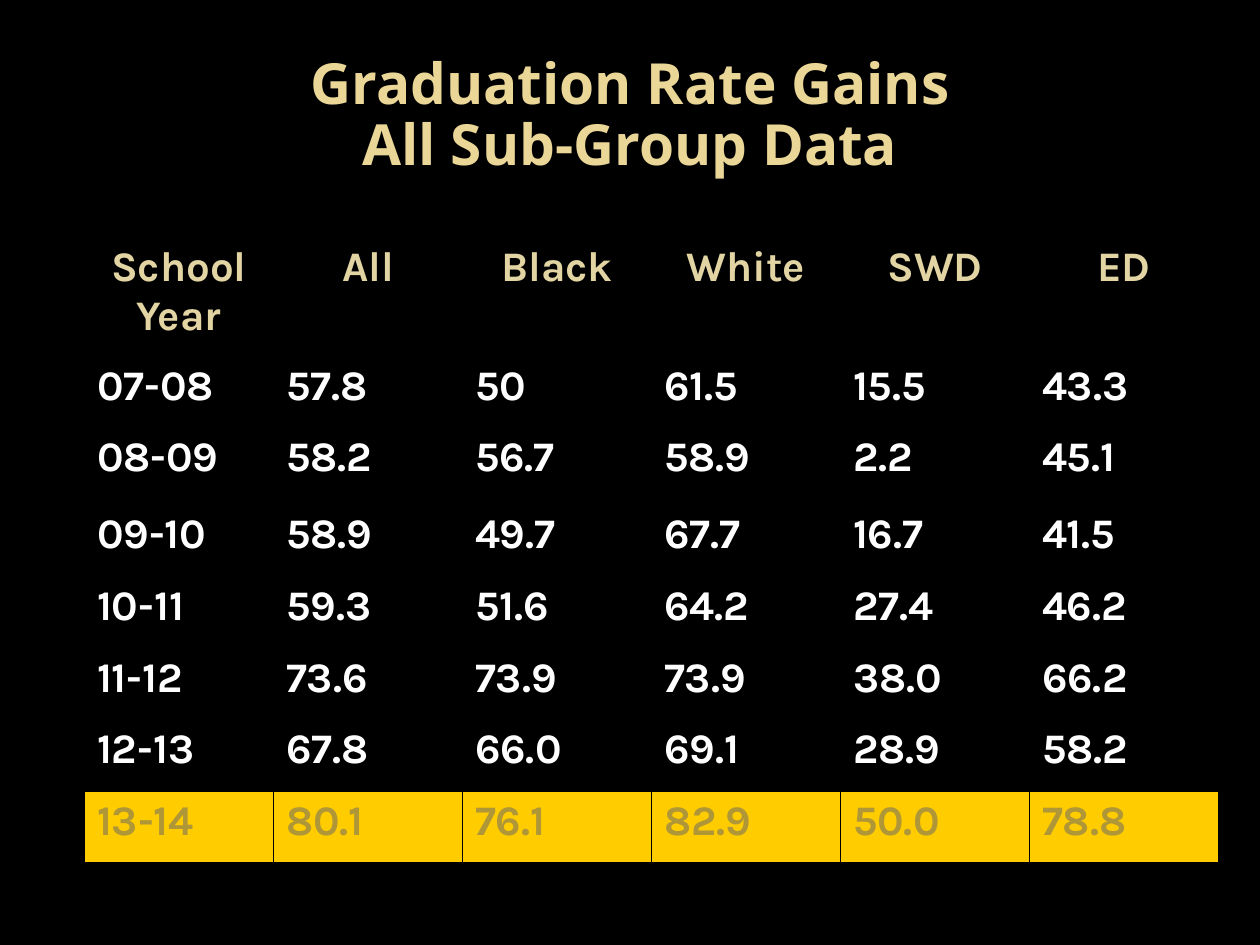
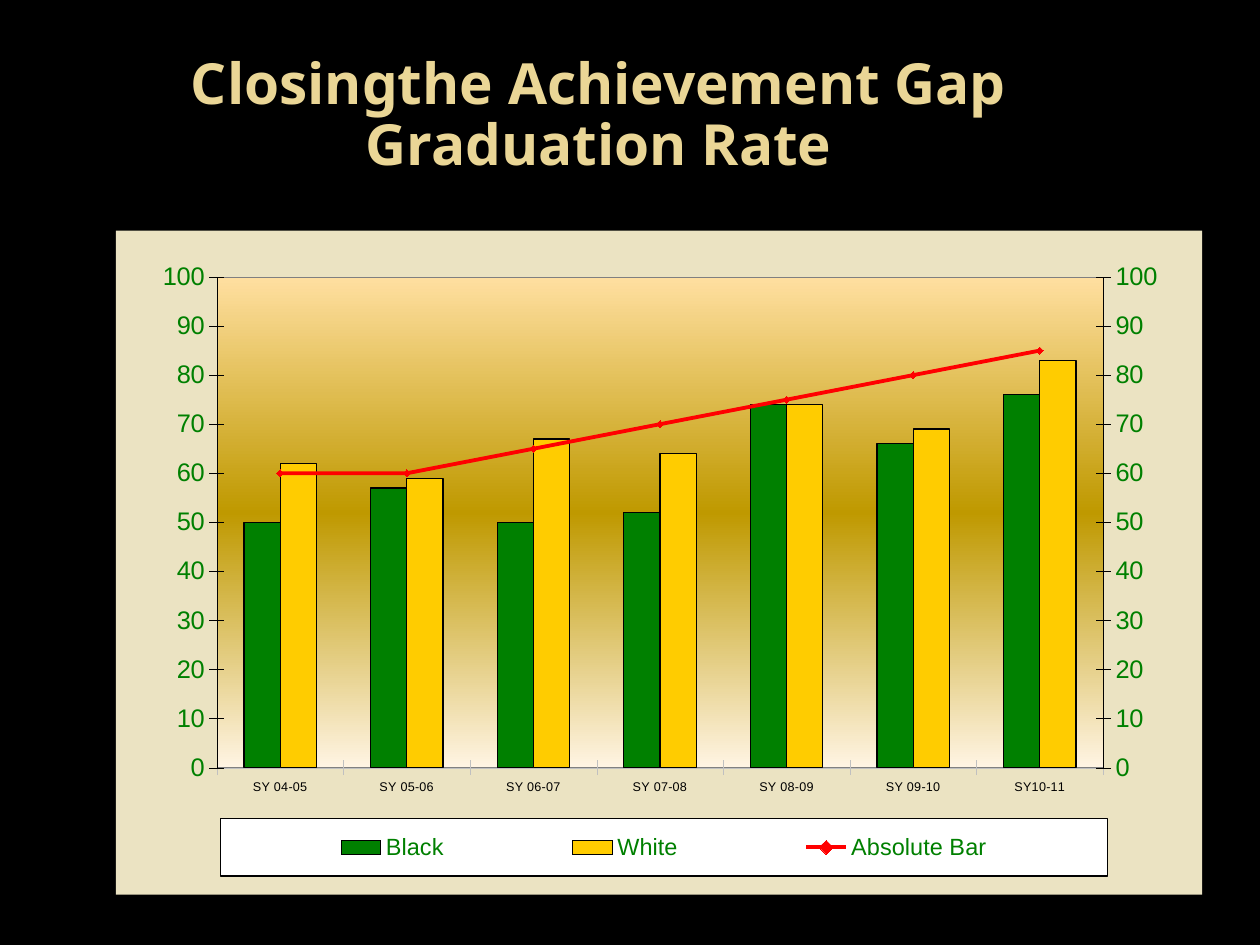
"""Build two slides on graduation rates: a sub-group table and an achievement gap chart."""
import copy
import lxml.etree
import pptx
import pptx.chart.data
import pptx.chart.plot
import pptx.dml.color
import pptx.enum.chart
import pptx.enum.text
import pptx.oxml
import pptx.util

Inches, Pt = pptx.util.Inches, pptx.util.Pt
RGB = pptx.dml.color.RGBColor.from_string
C = {"black": "000000", "white": "FFFFFF", "title": "EAD696", "head": "E2D5A3",
     "gold": "FFCC00", "olive": "AF9738", "green": "008000", "red": "FF0000",
     "cream": "EBE3C2", "grey": "808080", "silver": "C0C0C0",
     "peach": "FFDFA0", "bronze": "BF9900", "ivory": "FFF4E3"}
NS = ('xmlns:c="http://schemas.openxmlformats.org/drawingml/2006/chart" '
      'xmlns:a="http://schemas.openxmlformats.org/drawingml/2006/main"')


def style(font, name, size, color, bold=False):
    font.name, font.size, font.bold = name, Pt(size), bold
    font.color.rgb = RGB(color)


def xml(tag, body):
    return pptx.oxml.parse_xml(f"<{tag} {NS}>{body}</{tag}>")


prs = pptx.Presentation()
prs.slide_width, prs.slide_height = Inches(10), Inches(7.5)
slides = []
for left, title in ((0.5, "Graduation Rate Gains\vAll Sub-Group Data"),
                    (0.25, "Closingthe Achievement Gap\vGraduation Rate")):
    s = prs.slides.add_slide(prs.slide_layouts[6])
    s.background.fill.solid()
    s.background.fill.fore_color.rgb = RGB(C["black"])
    tf = s.shapes.add_textbox(Inches(left), Inches(0.3), Inches(9), Inches(1.25)).text_frame
    tf.word_wrap = True
    tf.vertical_anchor = pptx.enum.text.MSO_ANCHOR.MIDDLE
    p = tf.paragraphs[0]
    p.text = title
    p.alignment = pptx.enum.text.PP_ALIGN.CENTER
    p.line_spacing = 0.9
    for r in p.runs:
        style(r.font, "Noto Sans", 32.4, C["title"], True)
    slides.append(s)

rows = [
    ["School\nYear", "All", "Black", "White", "SWD", "ED"],
    ["07-08", "57.8", "50", "61.5", "15.5", "43.3"],
    ["08-09", "58.2", "56.7", "58.9", "2.2", "45.1"],
    ["09-10", "58.9", "49.7", "67.7", "16.7", "41.5"],
    ["10-11", "59.3", "51.6", "64.2", "27.4", "46.2"],
    ["11-12", "73.6", "73.9", "73.9", "38.0", "66.2"],
    ["12-13", "67.8", "66.0", "69.1", "28.9", "58.2"],
    ["13-14", "80.1", "76.1", "82.9", "50.0", "78.8"],
]
heights = [0.94, 0.57, 0.61] + [0.57] * 5
table = slides[0].shapes.add_table(len(rows), len(rows[0]), Inches(0.67), Inches(1.88),
                                   Inches(9), Inches(sum(heights))).table
table.first_row = table.horz_banding = False
for i, row in enumerate(rows):
    table.rows[i].height = Inches(heights[i])
    header, latest = i == 0, i == len(rows) - 1
    color = C["head"] if header else C["olive"] if latest else C["white"]
    for j, text in enumerate(row):
        cell = table.cell(i, j)
        cell.text_frame.text = text
        for p in cell.text_frame.paragraphs:
            if header:
                p.alignment = pptx.enum.text.PP_ALIGN.CENTER
            style(p.runs[0].font, "Karla", 24, color, True)
        if latest:
            cell.fill.solid()
            cell.fill.fore_color.rgb = RGB(C["gold"])
        else:
            cell.fill.background()
        tcPr = cell._tc.get_or_add_tcPr()
        for k, side in enumerate(("lnL", "lnR", "lnT", "lnB")):
            line = xml(f"a:{side}", f'<a:solidFill><a:srgbClr val="{C["black"]}"/></a:solidFill>')
            line.set("w", str(Pt(1)))
            tcPr.insert(k, line)

rates = {"Black": [50, 57, 50, 52, 74, 66, 76],
         "White": [62, 59, 67, 64, 74, 69, 83],
         "Absolute Bar": [60, 60, 65, 70, 75, 80, 85]}
data = pptx.chart.data.CategoryChartData()
data.categories = ["SY 04-05", "SY 05-06", "SY 06-07", "SY 07-08", "SY 08-09", "SY 09-10", "SY10-11"]
for name, values in rates.items():
    data.add_series(name, values)
chart = slides[1].shapes.add_chart(pptx.enum.chart.XL_CHART_TYPE.COLUMN_CLUSTERED, Inches(0.92),
                                   Inches(1.83), Inches(8.62), Inches(5.27), data).chart
style(chart.font, "Arial", 7.2, C["black"])
chart.has_title = False
bars = chart.plots[0]
bars.gap_width, bars.overlap, bars.vary_by_categories = 150, 0, False
for ser, color in zip(bars.series, (C["green"], C["gold"])):
    ser.format.fill.solid()
    ser.format.fill.fore_color.rgb = RGB(color)
    ser.format.line.color.rgb = RGB(C["black"])
    ser.format.line.width = Pt(0.73)

cat, val = chart.category_axis, chart.value_axis
for axis, color in ((cat, C["silver"]), (val, C["black"])):
    axis.has_major_gridlines = False
    axis.major_tick_mark = pptx.enum.chart.XL_TICK_MARK.CROSS
    axis.minor_tick_mark = pptx.enum.chart.XL_TICK_MARK.NONE
    axis.format.line.color.rgb = RGB(color)
    axis.format.line.width = Pt(0.18)
val.minimum_scale, val.maximum_scale, val.major_unit = 0, 100, 10
style(cat.tick_labels.font, "Arial", 7.2, C["black"])
style(val.tick_labels.font, "Arial", 14.5, C["green"])

c = "{http://schemas.openxmlformats.org/drawingml/2006/chart}"
area = chart._chartSpace.find(f".//{c}plotArea")
bar_xml = area.find(f"{c}barChart")
target_xml = bar_xml.findall(f"{c}ser")[2]
for old in target_xml.findall(f"{c}invertIfNegative"):
    target_xml.remove(old)
line_xml = xml("c:lineChart", '<c:grouping val="standard"/><c:varyColors val="0"/>'
               '<c:marker val="1"/><c:axId val="5001"/><c:axId val="5002"/>')
line_xml.insert(2, target_xml)
bar_xml.addnext(line_xml)

right, hidden = copy.deepcopy(val._element), copy.deepcopy(cat._element)
for axis, own, other in ((hidden, "5001", "5002"), (right, "5002", "5001")):
    axis.find(f"{c}axId").set("val", own)
    axis.find(f"{c}crossAx").set("val", other)
hidden.find(f"{c}delete").set("val", "1")
right.find(f"{c}axPos").set("val", "r")
right.find(f"{c}crosses").set("val", "max")
val._element.addnext(right)
right.addnext(hidden)

target = next(p for p in chart.plots if isinstance(p, pptx.chart.plot.LinePlot)).series[0]
target.smooth = False
target.format.line.color.rgb = RGB(C["red"])
target.format.line.width = Pt(2.18)
target.marker.style = pptx.enum.chart.XL_MARKER_STYLE.DIAMOND
target.marker.size = 4
target.marker.format.fill.solid()
target.marker.format.fill.fore_color.rgb = RGB(C["red"])
target.marker.format.line.color.rgb = RGB(C["red"])

chart.has_legend = True
legend = chart.legend
legend.include_in_layout = False
style(legend.font, "Arial", 13.4, C["green"])
legend_xml = legend._element
for old in area.findall(f"{c}layout") + legend_xml.findall(f"{c}layout"):
    old.getparent().remove(old)
for parent, index, inner, box in ((area, 0, '<c:layoutTarget val="inner"/>', (0.093, 0.07, 0.816, 0.739)),
                                  (legend_xml, 1, "", (0.096, 0.886, 0.817, 0.086))):
    modes = '<c:xMode val="edge"/><c:yMode val="edge"/>'
    sizes = "".join(f'<c:{k} val="{v}"/>' for k, v in zip("xywh", box))
    parent.insert(index, xml("c:layout", f"<c:manualLayout>{inner}{modes}{sizes}</c:manualLayout>"))

solid = '<a:solidFill><a:srgbClr val="{}"/></a:solidFill>'
stops = "".join(f'<a:gs pos="{pos}000"><a:srgbClr val="{C[name]}"/></a:gs>'
                for pos, name in ((0, "peach"), (48, "bronze"), (100, "ivory")))
gradient = f'<a:gradFill><a:gsLst>{stops}</a:gsLst><a:lin ang="5400000" scaled="0"/></a:gradFill>'
area.append(xml("c:spPr", f'{gradient}<a:ln w="3175">{solid.format(C["grey"])}</a:ln>'))
legend_xml.find(f"{c}txPr").addprevious(
    xml("c:spPr", f'{solid.format(C["white"])}<a:ln w="9525">{solid.format(C["black"])}</a:ln>'))
chart._chartSpace.find(f"{c}txPr").addprevious(
    xml("c:spPr", f'{solid.format(C["cream"])}<a:ln><a:noFill/></a:ln>'))

prs.save("out.pptx")
